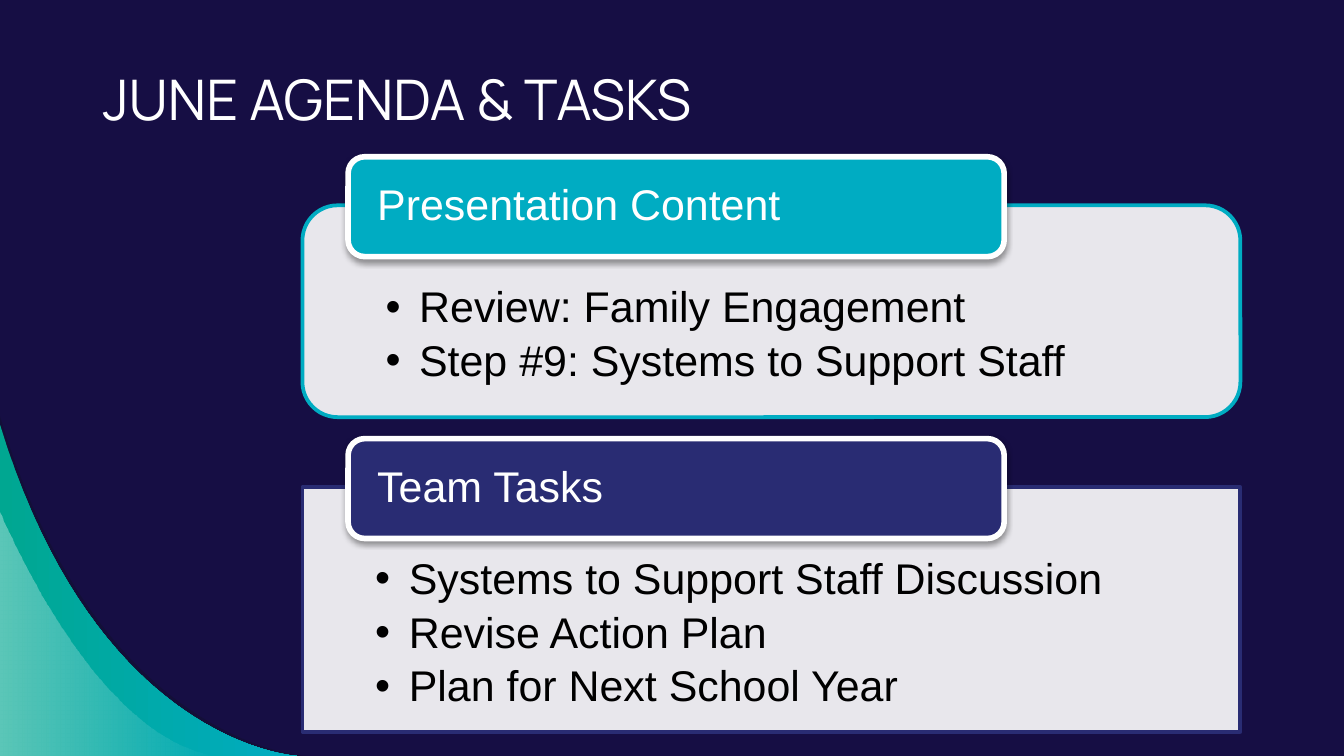
from lxml import etree
from pptx import Presentation
from pptx.dml.color import RGBColor
from pptx.enum.shapes import MSO_SHAPE
from pptx.enum.text import MSO_ANCHOR, PP_ALIGN
from pptx.oxml.ns import qn
from pptx.util import Pt

RECTANGLE = MSO_SHAPE.RECTANGLE
ROUNDED = MSO_SHAPE.ROUNDED_RECTANGLE
TOP = MSO_ANCHOR.TOP
MIDDLE = MSO_ANCHOR.MIDDLE
LEFT = PP_ALIGN.LEFT

NIGHT = RGBColor(0x16, 0x0E, 0x44)
SHADE = RGBColor(0x12, 0x10, 0x2F)
TEAL = RGBColor(0x00, 0xAC, 0xC2)
GREEN = RGBColor(0x00, 0xA7, 0x91)
INDIGO = RGBColor(0x29, 0x2C, 0x73)
WHITE = RGBColor(0xFF, 0xFF, 0xFF)
BLACK = RGBColor(0x00, 0x00, 0x00)

PAGE_WIDTH = 720
PAGE_HEIGHT = 405
CURVE_STEPS = 40


def set_alpha(color_element, percent):
    etree.SubElement(color_element, qn("a:alpha"), val=str(percent * 1000))


def set_solid(shape, color, opacity=100):
    shape.fill.solid()
    shape.fill.fore_color.rgb = color
    if opacity < 100:
        set_alpha(shape.fill._xPr.find(".//" + qn("a:srgbClr")), opacity)


def set_gradient(shape, colors, opacities):
    shape.fill.gradient()
    shape.fill.gradient_angle = 0
    for stop, color in zip(shape.fill.gradient_stops, colors):
        stop.color.rgb = color
    elements = shape.fill._xPr.findall(".//" + qn("a:srgbClr"))
    for element, opacity in zip(elements, opacities):
        set_alpha(element, opacity)


def curve_point(points, t):
    weights = ((1 - t) ** 3, 3 * t * (1 - t) ** 2, 3 * t**2 * (1 - t), t**3)
    return tuple(
        Pt(sum(weight * point[axis] for weight, point in zip(weights, points)))
        for axis in (0, 1)
    )


def add_swoosh(page, points):
    outline = [curve_point(points, step / CURVE_STEPS) for step in range(CURVE_STEPS + 1)]
    builder = page.shapes.build_freeform(*outline[0])
    builder.add_line_segments(outline[1:] + [(0, Pt(PAGE_HEIGHT))], close=True)
    shape = builder.convert_to_shape()
    shape.shadow.inherit = False
    shape.line.fill.background()
    return shape


def add_shadow(shape):
    effects = shape._element.spPr.find(qn("a:effectLst"))
    shadow = etree.SubElement(
        effects, qn("a:outerShdw"), blurRad=str(Pt(3.1)), dist=str(Pt(1.6)),
        dir="5400000", rotWithShape="0",
    )
    set_alpha(etree.SubElement(shadow, qn("a:srgbClr"), val=str(BLACK)), 38)


def add_panel(page, kind, left, top, width, height, line_color, line_width):
    shape = page.shapes.add_shape(kind, Pt(left), Pt(top), Pt(width), Pt(height))
    shape.shadow.inherit = False
    shape.line.color.rgb = line_color
    shape.line.width = Pt(line_width)
    return shape


def write_text(shape, lines, size, font_name, color, anchor, margins):
    frame = shape.text_frame
    frame.word_wrap = True
    frame.vertical_anchor = anchor
    frame.margin_left, frame.margin_top, frame.margin_right, frame.margin_bottom = map(Pt, margins)
    frame.text = "\n".join(lines)
    for para in frame.paragraphs:
        para.alignment = LEFT
        for span in para.runs:
            span.font.size = Pt(size)
            span.font.name = font_name
            span.font.color.rgb = color
    return frame.paragraphs


def add_bullet(para):
    properties = para._p.get_or_add_pPr()
    properties.set("marL", str(Pt(18)))
    properties.set("indent", str(Pt(-18)))
    bullet_color = etree.SubElement(properties, qn("a:buClr"))
    etree.SubElement(bullet_color, qn("a:srgbClr"), val=str(BLACK))
    etree.SubElement(properties, qn("a:buFont"), typeface="Arial")
    etree.SubElement(properties, qn("a:buChar"), char="•")
    para.line_spacing = 0.9
    para.space_after = Pt(4)


def add_section(page, top, height, kind, color, heading, items):
    body = add_panel(page, kind, 162, top, 502.5, height, color, 2)
    set_solid(body, WHITE, 90)
    for para in write_text(body, items, 23, "Arial", BLACK, TOP, (39, 37.5, 39, 13)):
        add_bullet(para)

    tab = add_panel(page, ROUNDED, 186.5, top - 26, 351.5, 53.5, WHITE, 3)
    set_solid(tab, color)
    add_shadow(tab)
    for para in write_text(tab, [heading], 23, "Arial", WHITE, MIDDLE, (13, 0, 13, 0)):
        para.line_spacing = 0.9


def add_title(page, text):
    box = page.shapes.add_textbox(Pt(48), Pt(27.5), Pt(553.5), Pt(49.5))
    write_text(box, [text], 30, "Manrope", WHITE, TOP, (7.2, 7.2, 7.2, 7.2))


def add_corner(page):
    shade = add_swoosh(page, [(0, 223), (52.5, 399), (163.5, 405), (163.5, 405)])
    set_solid(shade, SHADE, 54)
    band = add_swoosh(page, [(0, 227.5), (52, 399.5), (159, 405), (159, 405)])
    set_gradient(band, (GREEN, TEAL), (100, 100))
    glow = add_swoosh(page, [(0, 273.5), (0, 273.5), (49.5, 396.5), (116.5, 405)])
    set_gradient(glow, (WHITE, WHITE), (36, 0))


def main():
    deck = Presentation()
    deck.slide_width = Pt(PAGE_WIDTH)
    deck.slide_height = Pt(PAGE_HEIGHT)
    page = deck.slides.add_slide(deck.slide_layouts[6])
    page.background.fill.solid()
    page.background.fill.fore_color.rgb = NIGHT

    add_corner(page)
    add_section(
        page, 110, 113.5, ROUNDED, TEAL, "Presentation Content",
        ["Review: Family Engagement", "Step #9: Systems to Support Staff"],
    )
    add_section(
        page, 261, 131, RECTANGLE, INDIGO, "Team Tasks",
        ["Systems to Support Staff Discussion", "Revise Action Plan", "Plan for Next School Year"],
    )
    add_title(page, "JUNE AGENDA & TASKS")
    deck.save("out.pptx")


if __name__ == "__main__":
    main()
